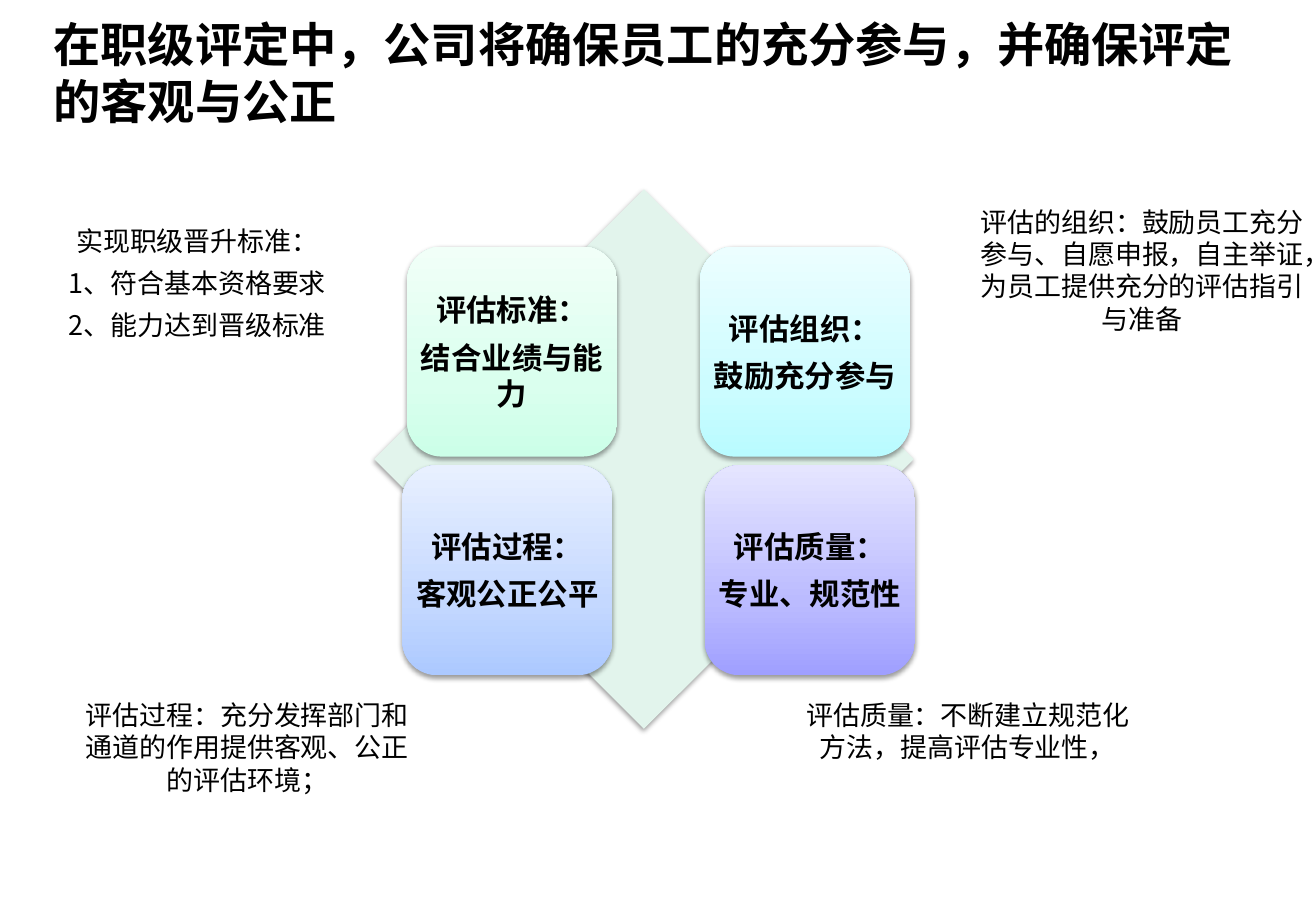
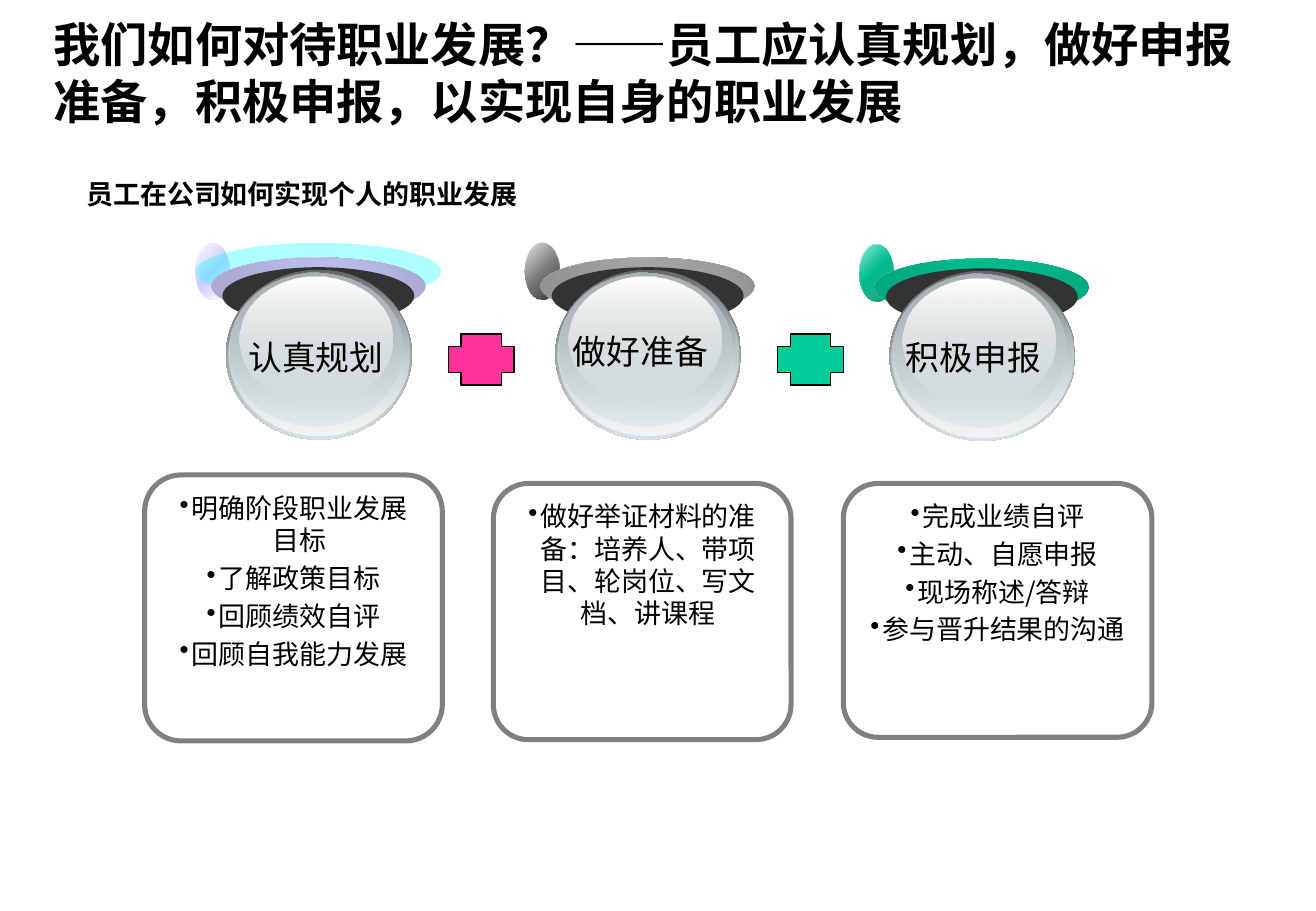
from dataclasses import dataclass
from typing import NamedTuple

from lxml import etree
from pptx import Presentation
from pptx.dml.color import RGBColor
from pptx.enum.shapes import MSO_SHAPE
from pptx.enum.text import MSO_ANCHOR, MSO_AUTO_SIZE, PP_ALIGN
from pptx.oxml.ns import qn
from pptx.util import Inches, Pt

CENTER, LEFT = PP_ALIGN.CENTER, PP_ALIGN.LEFT
TOP, MIDDLE = MSO_ANCHOR.TOP, MSO_ANCHOR.MIDDLE
NO_AUTOFIT = MSO_AUTO_SIZE.NONE
ELLIPSE, DIAMOND = MSO_SHAPE.OVAL, MSO_SHAPE.DIAMOND
ROUNDED, PLUS = MSO_SHAPE.ROUNDED_RECTANGLE, MSO_SHAPE.CROSS
TITLE_ONLY = 5


@dataclass(frozen=True)
class Theme:
    font: str = "Noto Sans CJK SC"
    tile_font: str = "Times New Roman"
    text: str = "000000"
    border: str = "808080"
    diamond: str = "E2F4EC"
    hat_shade: str = "333333"
    pink: str = "FF3399"
    green: str = "00CC99"
    cyan: str = "00FFFF"
    title_size: int = 28
    label_size: int = 20
    tile_size: int = 18
    body_size: int = 16


THEME = Theme()


class Box(NamedTuple):
    left: float
    top: float
    width: float
    height: float

    def shifted(self, left: float, top: float) -> "Box":
        return Box(self.left + left, self.top + top, self.width, self.height)


class Stop(NamedTuple):
    position: int
    color: str
    opacity: int = 100


class Paint(NamedTuple):
    """One stop gives a solid fill, several give a gradient."""
    stops: tuple[Stop, ...]
    angle: int = 0


class Note(NamedTuple):
    box: Box
    lines: tuple[str, ...]
    line_spacing: float = 1.0


class Tile(NamedTuple):
    left: float
    top: float
    lines: tuple[str, str]
    colors: tuple[str, str, str]


class Hat(NamedTuple):
    left: float
    top: float
    tint: str
    edge: str
    gloss: str
    overlay_box: Box
    overlay: Paint
    label: str
    label_left: float
    label_top: float


class Panel(NamedTuple):
    box: Box
    items: tuple[str, ...]


def solid(color: str, opacity: int = 100) -> Paint:
    return Paint((Stop(0, color, opacity),))


def blend(start: Stop, end: Stop, angle: int = 90) -> Paint:
    return Paint((start, end), angle)


def mirrored(outer: str, middle: str, angle: int) -> Paint:
    return Paint((Stop(0, outer), Stop(50, middle), Stop(100, outer)), angle)


# Slide 1 content
TITLE_BOX = Box(0.34, 0.16, 10.16, 0.87)
DIAMOND_BOX = Box(3.08, 1.56, 4.44, 4.44)
TILE_SIDE = 1.73
TILES = (
    Tile(3.35, 2.03, ("评估标准：", "结合业绩与能力"), ("CCFFE8", "DAFFEE", "F1FFF8")),
    Tile(5.76, 2.03, ("评估组织：", "鼓励充分参与"), ("B9FBFF", "CDFCFF", "ECFEFF")),
    Tile(3.31, 3.83, ("评估过程：", "客观公正公平"), ("ACC9FF", "C4D8FF", "E8F0FF")),
    Tile(5.8, 3.83, ("评估质量：", "专业、规范性"), ("9F9FFF", "BBBBFF", "E5E5FF")),
)
NOTES = (
    Note(Box(0.34, 1.72, 2.57, 1.15),
         ("实现职级晋升标准：", "1、符合基本资格要求", "2、能力达到晋级标准"), 1.3),
    Note(Box(0.59, 5.7, 2.89, 0.91),
         ("评估过程：充分发挥部门和通道的作用提供客观、公正的评估环境；",)),
    Note(Box(7.96, 1.64, 2.88, 1.18),
         ("评估的组织：鼓励员工充分参与、自愿申报，自主举证，为员工提供充分的评估指引与准备",)),
    Note(Box(6.52, 5.7, 2.89, 0.64),
         ("评估质量：不断建立规范化方法，提高评估专业性，",)),
)

# Slide 2 content; hat and ball layers are relative to the hat corner
EAR = Box(0, 0, 0.28, 0.47)
BRIM = Box(0.13, 0.12, 1.76, 0.47)
HAT_SHADE = Box(0.22, 0.2, 1.58, 0.47)
BALL_LAYERS = (
    (Box(0.25, 0.22, 1.53, 1.4), blend(Stop(0, "636869"), Stop(100, "D6E1E2"))),
    (Box(0.27, 0.23, 1.49, 1.36), blend(Stop(0, "D6E1E2", 0), Stop(100, "F1F5F5"))),
    (Box(0.28, 0.24, 1.42, 1.27), blend(Stop(0, "AAB2B3"), Stop(100, "D6E1E2", 48))),
    (Box(0.36, 0.28, 1.26, 1.03), blend(Stop(0, "FFFFFF"), Stop(100, "D6E1E2", 38))),
)
HATS = (
    Hat(1.61, 2, "CCCCFF", "9C9CC3", "A7A7D1", Box(0, 0, 2.02, 0.47),
        solid(THEME.cyan, 32), "认真规划", 1.94, 2.72),
    Hat(4.32, 2, "B2B2B2", "888888", "929292", EAR,
        blend(Stop(0, "B2B2B2", 32), Stop(100, "000000", 90), 45), "做好准备", 4.61, 2.67),
    Hat(7.07, 2.01, THEME.green, "009C75", "00A77E", EAR,
        blend(Stop(0, THEME.green, 32), Stop(100, "00926D"), 45), "积极申报", 7.35, 2.72),
)
PLUSES = ((3.69, THEME.pink), (6.4, THEME.green))
PANELS = (
    Panel(Box(1.19, 3.91, 2.45, 2.19),
          ("明确阶段职业发展目标", "了解政策目标", "回顾绩效自评", "回顾自我能力发展")),
    Panel(Box(4.06, 3.98, 2.45, 2.11),
          ("做好举证材料的准备：培养人、带项目、轮岗位、写文档、讲课程",)),
    Panel(Box(6.94, 3.98, 2.54, 2.09),
          ("完成业绩自评", "主动、自愿申报", "现场称述/答辩", "参与晋升结果的沟通")),
)


# Drawing helpers
def apply_format(target, values: dict) -> None:
    for name, value in values.items():
        setattr(target, name, value)


def place(shape, box: Box) -> None:
    apply_format(shape, {name: Inches(value) for name, value in box._asdict().items()})


def add_color(parent, color: str, opacity: int) -> None:
    element = etree.SubElement(parent, qn("a:srgbClr"), val=color)
    if opacity < 100:
        etree.SubElement(element, qn("a:alpha"), val=str(opacity * 1000))


def paint_shape(shape, paint: Paint) -> None:
    shape.fill.background()
    properties = shape._element.spPr
    if len(paint.stops) == 1:
        fill = etree.Element(qn("a:solidFill"))
        add_color(fill, paint.stops[0].color, paint.stops[0].opacity)
    else:
        fill = etree.Element(qn("a:gradFill"), rotWithShape="1")
        stops = etree.SubElement(fill, qn("a:gsLst"))
        for stop in paint.stops:
            entry = etree.SubElement(stops, qn("a:gs"), pos=str(stop.position * 1000))
            add_color(entry, stop.color, stop.opacity)
        etree.SubElement(fill, qn("a:lin"), ang=str(paint.angle * 60000), scaled="0")
    properties.replace(properties.find(qn("a:noFill")), fill)


def add_shadow(shape) -> None:
    effects = shape._element.spPr.find(qn("a:effectLst"))
    shadow = etree.SubElement(effects, qn("a:outerShdw"), blurRad=str(Pt(3.1)),
                              dist=str(Pt(1.6)), dir="5400000", rotWithShape="0")
    add_color(shadow, "000000", 38)


def add_shape(slide, kind, box: Box, paint: Paint | None = None,
              line: str | None = None, line_width: float = 0.75):
    shape = slide.shapes.add_shape(kind, *map(Inches, box))
    shape.shadow.inherit = False
    if paint is None:
        shape.fill.background()
    else:
        paint_shape(shape, paint)
    if line is None:
        shape.line.fill.background()
    else:
        shape.line.color.rgb = RGBColor.from_string(line)
        shape.line.width = Pt(line_width)
    return shape


def add_bullet(paragraph) -> None:
    properties = paragraph._p.get_or_add_pPr()
    properties.set("marL", str(Inches(0.1)))
    properties.set("indent", str(-Inches(0.1)))
    etree.SubElement(properties, qn("a:buChar"), char="•")


def write_text(shape, lines: tuple[str, ...], size: int = THEME.body_size,
               bold: bool = False, font: str = THEME.font, align=CENTER, anchor=TOP,
               wrap: bool = True, bullets: bool = False, before: float = 0,
               after: float = 0, line_spacing: float = 1.0) -> None:
    frame = shape.text_frame
    apply_format(frame, {"word_wrap": wrap, "auto_size": NO_AUTOFIT,
                         "vertical_anchor": anchor})
    for index, line in enumerate(lines):
        paragraph = frame.add_paragraph() if index else frame.paragraphs[0]
        if bullets:
            add_bullet(paragraph)
        apply_format(paragraph, {"alignment": align, "line_spacing": line_spacing,
                                 "space_before": Pt(before if index else 0),
                                 "space_after": Pt(after)})
        run = paragraph.add_run()
        run.text = line
        apply_format(run.font, {"size": Pt(size), "bold": bold, "name": font})
        run.font.color.rgb = RGBColor.from_string(THEME.text)
        etree.SubElement(run._r.get_or_add_rPr(), qn("a:ea"), typeface=THEME.font)


def add_text(slide, box: Box, lines: tuple[str, ...], **style) -> None:
    write_text(slide.shapes.add_textbox(*map(Inches, box)), lines, **style)


def add_titled_slide(presentation, title: str):
    slide = presentation.slides.add_slide(presentation.slide_layouts[TITLE_ONLY])
    place(slide.shapes.title, TITLE_BOX)
    write_text(slide.shapes.title, (title,), size=THEME.title_size, bold=True,
               align=LEFT, anchor=MIDDLE)
    return slide


def draw_tile(slide, tile: Tile) -> None:
    stops = tuple(Stop(*pair) for pair in zip((0, 35, 100), tile.colors))
    shape = add_shape(slide, ROUNDED, Box(tile.left, tile.top, TILE_SIDE, TILE_SIDE),
                      Paint(stops, 270))
    add_shadow(shape)
    sides = ("left", "top", "right", "bottom")
    apply_format(shape.text_frame, {f"margin_{side}": 0 for side in sides})
    write_text(shape, tile.lines, size=THEME.tile_size, bold=True,
               font=THEME.tile_font, anchor=MIDDLE, after=6.3)


def draw_hat(slide, hat: Hat) -> None:
    layers = (
        (EAR, mirrored("FFFFFF", hat.tint, 45)),
        (hat.overlay_box, hat.overlay),
        (BRIM, mirrored(hat.edge, hat.tint, 315)),
        (BRIM, blend(Stop(0, hat.gloss), Stop(100, hat.tint, 0), 45)),
        (HAT_SHADE, solid(THEME.hat_shade)),
        *BALL_LAYERS,
    )
    for box, paint in layers:
        add_shape(slide, ELLIPSE, box.shifted(hat.left, hat.top), paint)
    add_text(slide, Box(hat.label_left, hat.label_top, 1.32, 0.44), (hat.label,),
             size=THEME.label_size, wrap=False)


def draw_panel(slide, panel: Panel) -> None:
    shape = add_shape(slide, ROUNDED, panel.box, line=THEME.border, line_width=3)
    shape.adjustments[0] = 0.137
    write_text(shape, panel.items, bullets=True, before=3.2)


def build_assessment_slide(presentation) -> None:
    slide = add_titled_slide(
        presentation, "在职级评定中，公司将确保员工的充分参与，并确保评定的客观与公正")
    add_shadow(add_shape(slide, DIAMOND, DIAMOND_BOX, solid(THEME.diamond)))
    for tile in TILES:
        draw_tile(slide, tile)
    for note in NOTES:
        add_text(slide, note.box, note.lines, line_spacing=note.line_spacing)


def build_career_slide(presentation) -> None:
    slide = add_titled_slide(
        presentation,
        "我们如何对待职业发展？——员工应认真规划，做好申报准备，积极申报，以实现自身的职业发展")
    add_text(slide, Box(0.59, 1.41, 3.79, 0.37), ("员工在公司如何实现个人的职业发展",),
             bold=True, wrap=False)
    for hat in HATS:
        draw_hat(slide, hat)
    for left, color in PLUSES:
        add_shape(slide, PLUS, Box(left, 2.75, 0.54, 0.42), solid(color), THEME.text)
    for panel in PANELS:
        draw_panel(slide, panel)


def main() -> None:
    presentation = Presentation()
    presentation.slide_width = Inches(10.83)
    presentation.slide_height = Inches(7.5)
    build_assessment_slide(presentation)
    build_career_slide(presentation)
    presentation.save("out.pptx")


if __name__ == "__main__":
    main()
